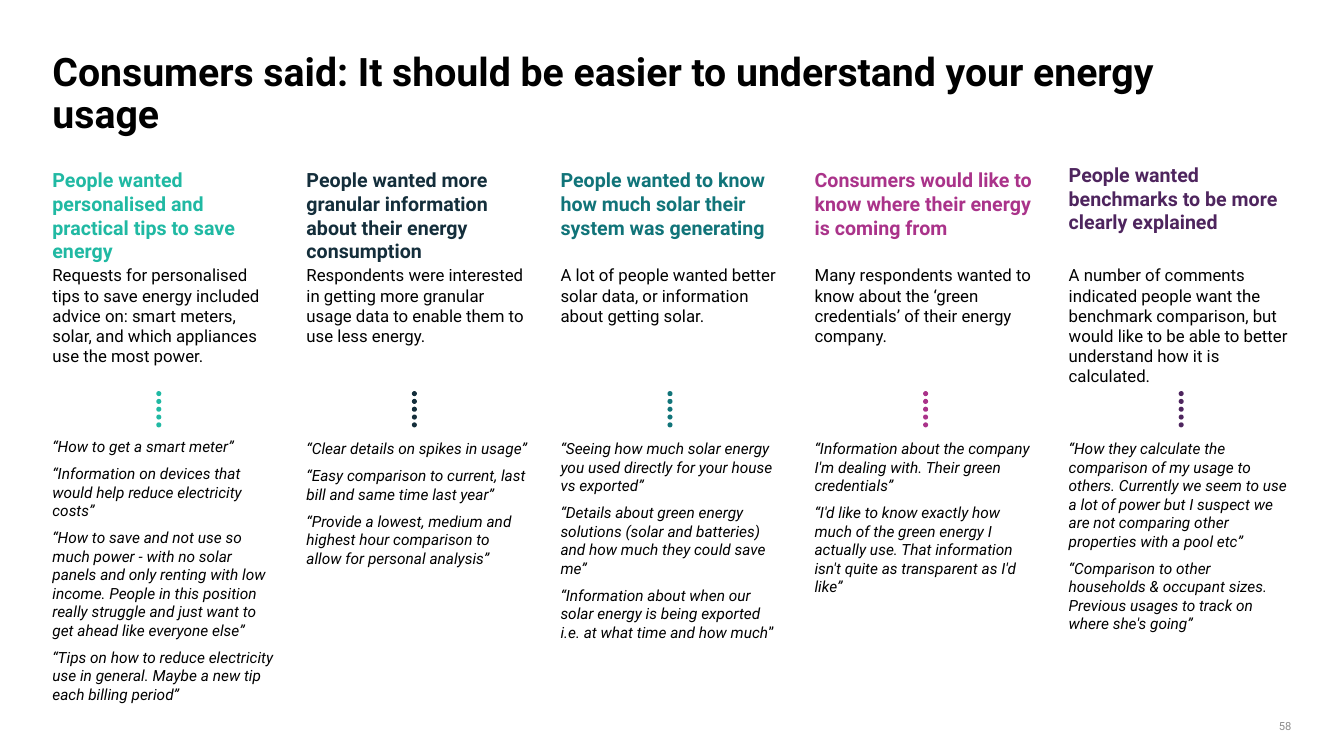
from dataclasses import dataclass

from pptx import Presentation
from pptx.dml.color import RGBColor
from pptx.enum.shapes import MSO_SHAPE
from pptx.enum.text import MSO_ANCHOR, MSO_AUTO_SIZE, PP_ALIGN
from pptx.slide import Slide
from pptx.text.text import TextFrame
from pptx.util import Inches, Pt

OVAL = MSO_SHAPE.OVAL
TOP, BOTTOM = MSO_ANCHOR.TOP, MSO_ANCHOR.BOTTOM
LEFT, RIGHT = PP_ALIGN.LEFT, PP_ALIGN.RIGHT
NO_AUTOFIT = MSO_AUTO_SIZE.NONE

FONT = "Roboto"
BLACK = "000000"
GREY = "8C8C8C"

FIRST_LEFT, COLUMN_STEP, COLUMN_WIDTH = 0.52, 2.52, 2.2
FIRST_DOT_LEFT, DOT_COLUMN_STEP = 1.55, 2.535
DOT_TOP, DOT_STEP, DOT_SIZE, DOT_COUNT = 3.88, 0.0775, 0.05, 5


@dataclass
class Theme:
    color: str
    heading: str
    summary: str
    quotes: list[str]
    upright_end: str = ""
    heading_top: float = 1.67
    quotes_top: float = 4.36


THEMES = [
    Theme(
        "20B9A3",
        "People wanted personalised and practical tips to save energy",
        "Requests for personalised tips to save energy included advice on: smart meters, "
        "solar, and which appliances use the most power.",
        [
            "“How to get a smart meter”",
            "“Information on devices that would help reduce electricity costs”",
            "“How to save and not use so much power - with no solar panels and only renting "
            "with low income. People in this position really struggle and just want to get "
            "ahead like everyone else”",
            "“Tips on how to reduce electricity use in general. Maybe a new tip each billing period”",
        ],
        quotes_top=4.34,
    ),
    Theme(
        "142E3B",
        "People wanted more granular information about their energy consumption",
        "Respondents were interested in getting more granular usage data to enable them "
        "to use less energy.",
        [
            "“Clear details on spikes in usage”",
            "“Easy comparison to current, last bill and same time last year”",
            "“Provide a lowest, medium and highest hour comparison to allow for personal analysis”",
        ],
    ),
    Theme(
        "117479",
        "People wanted to know how much solar their system was generating",
        "A lot of people wanted better solar data, or information about getting solar.",
        [
            "“Seeing how much solar energy you used directly for your house vs exported”",
            "“Details about green energy solutions (solar and batteries) and how much they "
            "could save me”",
            "“Information about when our solar energy is being exported i.e. at what time "
            "and how much",
        ],
        upright_end="”",
    ),
    Theme(
        "AA338A",
        "Consumers would like to know where their energy is coming from",
        "Many respondents wanted to know about the ‘green credentials’ of their energy company.",
        [
            "“Information about the company I'm dealing with. Their green credentials”",
            "“I'd like to know exactly how much of the green energy I actually use. That "
            "information isn't quite as transparent as I'd like”",
        ],
    ),
    Theme(
        "4E255E",
        "People wanted benchmarks to be more clearly explained",
        "A number of comments indicated people want the benchmark comparison, but would "
        "like to be able to better understand how it is calculated.",
        [
            "“How they calculate the comparison of my usage to others. Currently we seem to "
            "use a lot of power but I suspect we are not comparing other properties with a "
            "pool etc”",
            "“Comparison to other households & occupant sizes. Previous usages to track on "
            "where she's going”",
        ],
        heading_top=1.62,
    ),
]


def rgb(color: str) -> RGBColor:
    return RGBColor.from_string(color)


def write(frame: TextFrame, texts: list[str], size: float, color: str = BLACK,
          bold: bool = False, italic: bool = False, align: PP_ALIGN = LEFT,
          anchor: MSO_ANCHOR = TOP, space_after: float = 6) -> None:
    """Fill a frame without margins, one paragraph per text."""
    frame.margin_left = frame.margin_right = frame.margin_top = frame.margin_bottom = 0
    frame.word_wrap = True
    frame.auto_size = NO_AUTOFIT
    frame.vertical_anchor = anchor
    for index, text in enumerate(texts):
        paragraph = frame.add_paragraph() if index else frame.paragraphs[0]
        paragraph.add_run().text = text
        paragraph.alignment = align
        paragraph.space_after = Pt(space_after)
        font = paragraph.font
        font.name, font.size = FONT, Pt(size)
        font.bold, font.italic = bold, italic
        font.color.rgb = rgb(color)


def add_text_frame(slide: Slide, left: float, top: float, width: float,
                   height: float) -> TextFrame:
    return slide.shapes.add_textbox(
        Inches(left), Inches(top), Inches(width), Inches(height)).text_frame


def add_dots(slide: Slide, left: float, color: str) -> None:
    dots = slide.shapes.add_group_shape()
    for row in range(DOT_COUNT):
        dot = dots.shapes.add_shape(
            OVAL, Inches(left), Inches(DOT_TOP + row * DOT_STEP),
            Inches(DOT_SIZE), Inches(DOT_SIZE))
        dot.shadow.inherit = False
        dot.fill.solid()
        dot.fill.fore_color.rgb = rgb(color)
        dot.line.fill.background()


def add_theme(slide: Slide, column: int, theme: Theme) -> None:
    left = FIRST_LEFT + column * COLUMN_STEP
    heading = add_text_frame(slide, left, theme.heading_top, COLUMN_WIDTH, 0.95)
    write(heading, [theme.heading], 14, theme.color, bold=True)
    summary = add_text_frame(slide, left, 2.63, COLUMN_WIDTH, 1.21)
    write(summary, [theme.summary], 12)
    add_dots(slide, FIRST_DOT_LEFT + column * DOT_COLUMN_STEP, theme.color)
    quotes = add_text_frame(slide, left, theme.quotes_top, COLUMN_WIDTH, 2.66)
    write(quotes, theme.quotes, 11, italic=True)
    if theme.upright_end:
        closing = quotes.paragraphs[-1].add_run()
        closing.text = theme.upright_end
        closing.font.italic = False


def main() -> None:
    deck = Presentation()
    deck.slide_width, deck.slide_height = Inches(13.33), Inches(7.5)
    slide = deck.slides.add_slide(deck.slide_layouts.get_by_name("Title Only"))

    title = slide.shapes.title
    title.left, title.top = Inches(FIRST_LEFT), Inches(0.52)
    title.width, title.height = Inches(11.69), Inches(0.85)
    write(title.text_frame,
          ["Consumers said: It should be easier to understand your energy usage"],
          28, bold=True, space_after=0)
    title.text_frame.paragraphs[0].line_spacing = 0.9

    for column, theme in enumerate(THEMES):
        add_theme(slide, column, theme)

    page_number = add_text_frame(slide, 12.36, 7.14, 0.45, 0.13)
    write(page_number, ["58"], 8, GREY, align=RIGHT, anchor=BOTTOM, space_after=0)
    deck.save("out.pptx")


if __name__ == "__main__":
    main()
